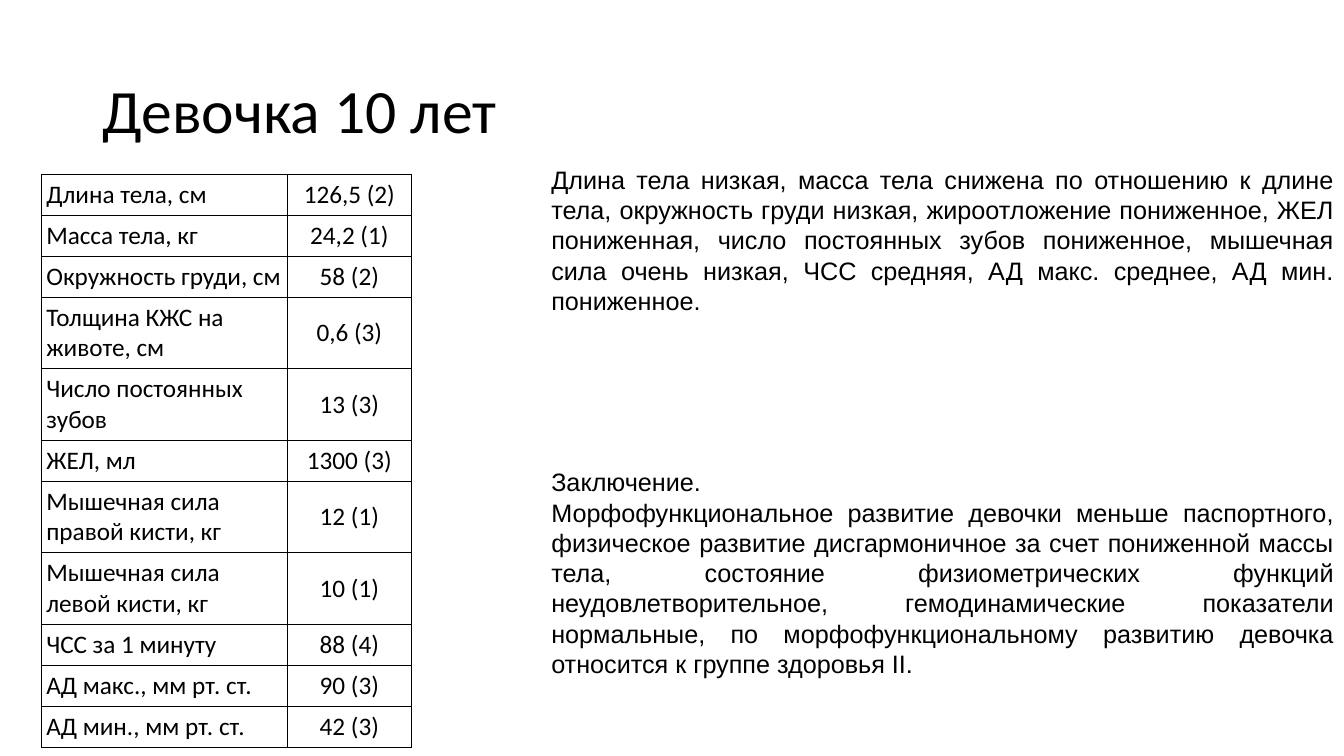
from dataclasses import dataclass

from lxml.etree import SubElement
from pptx import Presentation
from pptx.dml.color import RGBColor
from pptx.enum.text import MSO_ANCHOR as Anchor, MSO_AUTO_SIZE as AutoSize, PP_ALIGN as Align
from pptx.oxml.ns import qn
from pptx.util import Inches, Pt


@dataclass(frozen=True)
class Theme:
    ink: str = "000000"
    heading_font: str = "Calibri"
    body_font: str = "Arial"
    title_size: int = 44
    text_size: int = 18
    border_width: float = 0.75
    cell_margin: float = 0.05
    section_gap: int = 108


class SlideBuilder:
    """Places styled elements on a grid of 160 columns by 90 rows."""

    columns, rows = 160, 90

    def __init__(self, presentation, theme):
        self.theme = theme
        self.width = presentation.slide_width
        self.height = presentation.slide_height
        self.slide = presentation.slides.add_slide(presentation.slide_layouts[5])

    def across(self, columns):
        return round(self.width * columns / self.columns)

    def down(self, rows):
        return round(self.height * rows / self.rows)

    def area(self, left, top, width, height):
        return self.across(left), self.down(top), self.across(width), self.down(height)

    def add_run(self, paragraph, text, font, size):
        run = paragraph.add_run()
        run.text = text
        run.font.name = font
        run.font.size = Pt(size)
        run.font.color.rgb = RGBColor.from_string(self.theme.ink)

    def title(self, text, *place):
        shape = self.slide.shapes.title
        shape.left, shape.top, shape.width, shape.height = self.area(*place)
        shape.text_frame.vertical_anchor = Anchor.MIDDLE
        paragraph = shape.text_frame.paragraphs[0]
        paragraph.alignment = Align.LEFT
        paragraph.line_spacing = 0.9
        self.add_run(paragraph, text, self.theme.heading_font, self.theme.title_size)

    def text(self, sections, *place):
        """Each section is a list of paragraphs; a gap separates sections."""
        frame = self.slide.shapes.add_textbox(*self.area(*place)).text_frame
        frame.word_wrap = True
        frame.auto_size = AutoSize.SHAPE_TO_FIT_TEXT
        paragraph = None
        for section in sections:
            for index, content in enumerate(section):
                first = paragraph is None
                paragraph = frame.paragraphs[0] if first else frame.add_paragraph()
                paragraph.alignment = Align.JUSTIFY
                if index == 0 and not first:
                    paragraph.space_before = Pt(self.theme.section_gap)
                self.add_run(paragraph, content, self.theme.body_font, self.theme.text_size)

    def table(self, records, left, top, column_widths, row_heights):
        place = self.area(left, top, sum(column_widths), sum(row_heights))
        table = self.slide.shapes.add_table(len(records), len(column_widths), *place).table
        table.first_row = table.horz_banding = False
        for column, width in zip(table.columns, column_widths):
            column.width = self.across(width)
        for row, height, record in zip(table.rows, row_heights, records):
            row.height = self.down(height)
            for cell, content, alignment in zip(row.cells, record, (Align.LEFT, Align.CENTER)):
                self.fill_cell(cell, content, alignment)

    def fill_cell(self, cell, content, alignment):
        margin = Inches(self.theme.cell_margin)
        cell.margin_left = cell.margin_right = margin
        cell.margin_top = cell.margin_bottom = margin
        cell.vertical_anchor = Anchor.MIDDLE
        paragraph = cell.text_frame.paragraphs[0]
        paragraph.alignment = alignment
        self.add_run(paragraph, content, self.theme.heading_font, self.theme.text_size)
        # Borders precede the fill in the cell properties
        properties = cell._tc.get_or_add_tcPr()
        for side in ("a:lnL", "a:lnR", "a:lnT", "a:lnB"):
            line = SubElement(properties, qn(side), w=str(Pt(self.theme.border_width)))
            fill = SubElement(line, qn("a:solidFill"))
            SubElement(fill, qn("a:srgbClr"), val=self.theme.ink)
        cell.fill.background()


MEASUREMENTS = [
    ("Длина тела, см", "126,5 (2)"),
    ("Масса тела, кг", "24,2 (1)"),
    ("Окружность груди, см", "58 (2)"),
    ("Толщина КЖС на животе, см", "0,6 (3)"),
    ("Число постоянных зубов", "13 (3)"),
    ("ЖЕЛ, мл", "1300 (3)"),
    ("Мышечная сила правой кисти, кг", "12 (1)"),
    ("Мышечная сила левой кисти, кг", "10 (1)"),
    ("ЧСС за 1 минуту", "88 (4)"),
    ("АД макс., мм рт. ст.", "90 (3)"),
    ("АД мин., мм рт. ст.", "42 (3)"),
]
TALL_ROWS = {3, 6, 7}

ASSESSMENT = [
    "Длина тела низкая, масса тела снижена по отношению к длине тела, "
    "окружность груди низкая, жироотложение пониженное, ЖЕЛ пониженная, "
    "число постоянных зубов пониженное, мышечная сила очень низкая, "
    "ЧСС средняя, АД макс. среднее, АД мин. пониженное.",
]
CONCLUSION = [
    "Заключение.",
    "Морфофункциональное развитие девочки меньше паспортного, физическое "
    "развитие дисгармоничное за счет пониженной массы тела, состояние "
    "физиометрических функций неудовлетворительное, гемодинамические "
    "показатели нормальные, по морфофункциональному развитию девочка "
    "относится к группе здоровья II.",
]


def main():
    presentation = Presentation()
    presentation.slide_width, presentation.slide_height = Inches(13.33), Inches(7.5)
    builder = SlideBuilder(presentation, Theme())

    # Heading
    builder.title("Девочка 10 лет", 11, 4.8, 138, 17.4)

    # Measurements
    row_heights = [5.88 if index in TALL_ROWS else 3.48 for index in range(len(MEASUREMENTS))]
    builder.table(MEASUREMENTS, 4.92, 20.76, (29.3, 14.75), row_heights)

    # Assessment and conclusion
    builder.text([ASSESSMENT, CONCLUSION], 64.45, 18.96, 95.55, 63)

    presentation.save("out.pptx")


if __name__ == "__main__":
    main()
